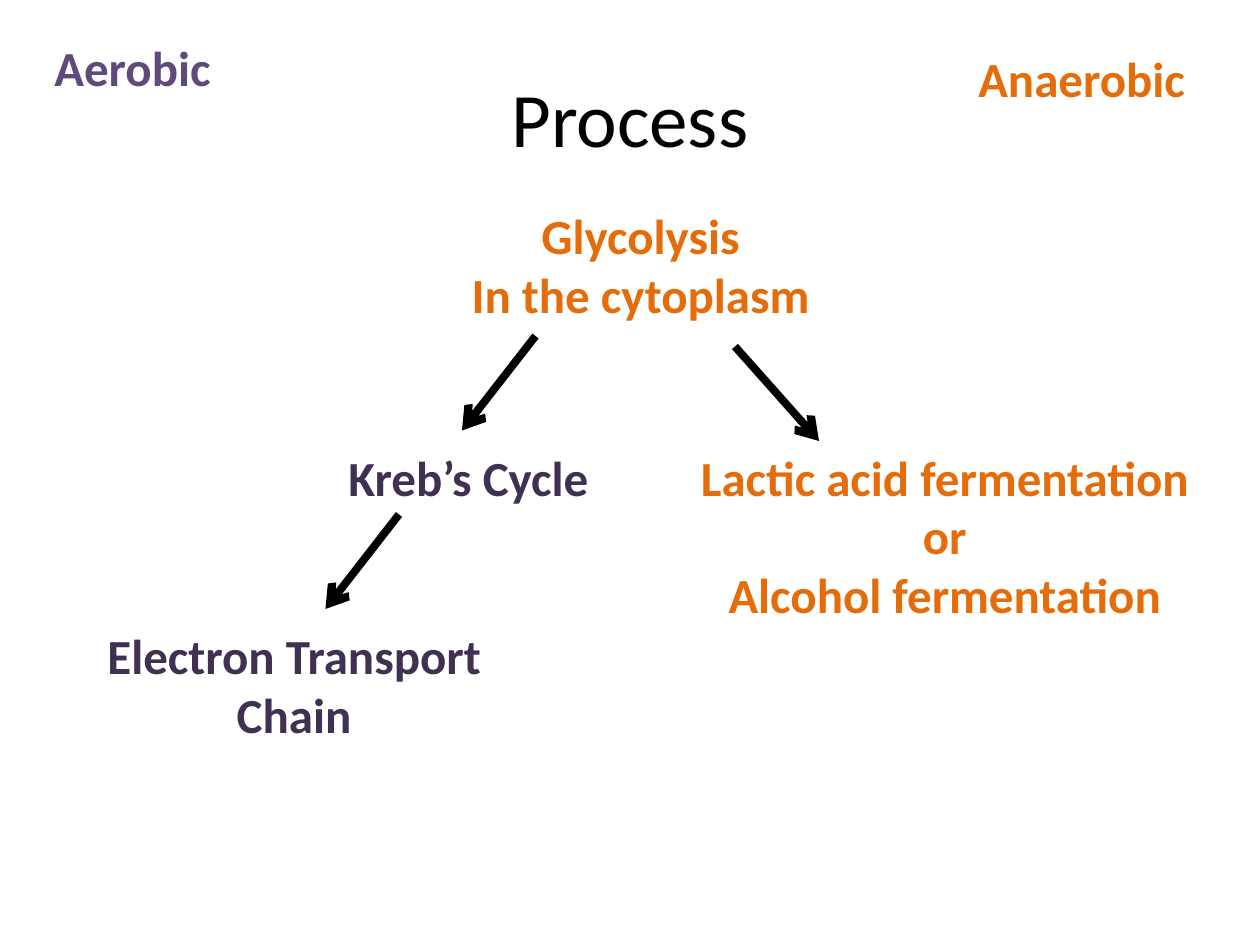
import pptx
import pptx.util
import pptx.dml.color
import pptx.enum.shapes
import pptx.enum.text
import pptx.oxml.ns
import lxml.etree

deck = pptx.Presentation()
deck.slide_width = pptx.util.Inches(10)
deck.slide_height = pptx.util.Inches(7.5)
slide = deck.slides.add_slide(deck.slide_layouts[6])

# Grid of 120 columns by 90 rows
unit = deck.slide_width // 120
align = pptx.enum.text.PP_ALIGN
anchor = pptx.enum.text.MSO_ANCHOR
qn = pptx.oxml.ns.qn

ORANGE, PURPLE, DARK, BLACK = "E46C0A", "604A7B", "403152", "000000"


def color(code):
    return pptx.dml.color.RGBColor.from_string(code)


def write(text, box, hue=BLACK, size=28, bold=True, side=align.CENTER, place=anchor.TOP):
    shape = slide.shapes.add_textbox(*[round(n * unit) for n in box])
    frame = shape.text_frame
    frame.word_wrap = True
    frame.vertical_anchor = place
    frame.text = text
    for para in frame.paragraphs:
        para.alignment = side
        font = para.runs[0].font
        font.name, font.size, font.bold = "Calibri", pptx.util.Pt(size), bold
        font.color.rgb = color(hue)


# Title
write("Process", (6, 3.6, 108, 15), size=44, bold=False, place=anchor.MIDDLE)

# Shared first step
write("Glycolysis\nIn the cytoplasm", (42, 19, 38, 12.5), hue=ORANGE)

# Arrows between steps: start column and row, end column and row
for x1, y1, x2, y2 in [(51, 32, 44, 41), (38, 49, 31, 58), (70, 33, 78, 42)]:
    arrow = slide.shapes.add_connector(
        pptx.enum.shapes.MSO_CONNECTOR.STRAIGHT,
        x1 * unit, y1 * unit, x2 * unit, y2 * unit)
    arrow.line.color.rgb = color(BLACK)
    arrow.line.width = pptx.util.Pt(4.5)
    lxml.etree.SubElement(arrow.line._get_or_add_ln(), qn("a:tailEnd"), type="arrow")
    lxml.etree.SubElement(arrow._element.spPr, qn("a:effectLst"))

# Aerobic branch
write("Kreb’s Cycle", (32, 42, 28, 6.87), hue=DARK, side=align.LEFT)
write("Electron Transport Chain", (8, 59, 40, 12.5), hue=DARK)

# Anaerobic branch
write("Lactic acid fermentation \nor \nAlcohol fermentation ", (64, 42, 53, 18.2), hue=ORANGE)

# Corner labels
write("Anaerobic", (92, 4, 33, 6.87), hue=ORANGE, side=align.LEFT)
write("Aerobic", (4, 3, 33, 6.87), hue=PURPLE, side=align.LEFT)

deck.save("out.pptx")
